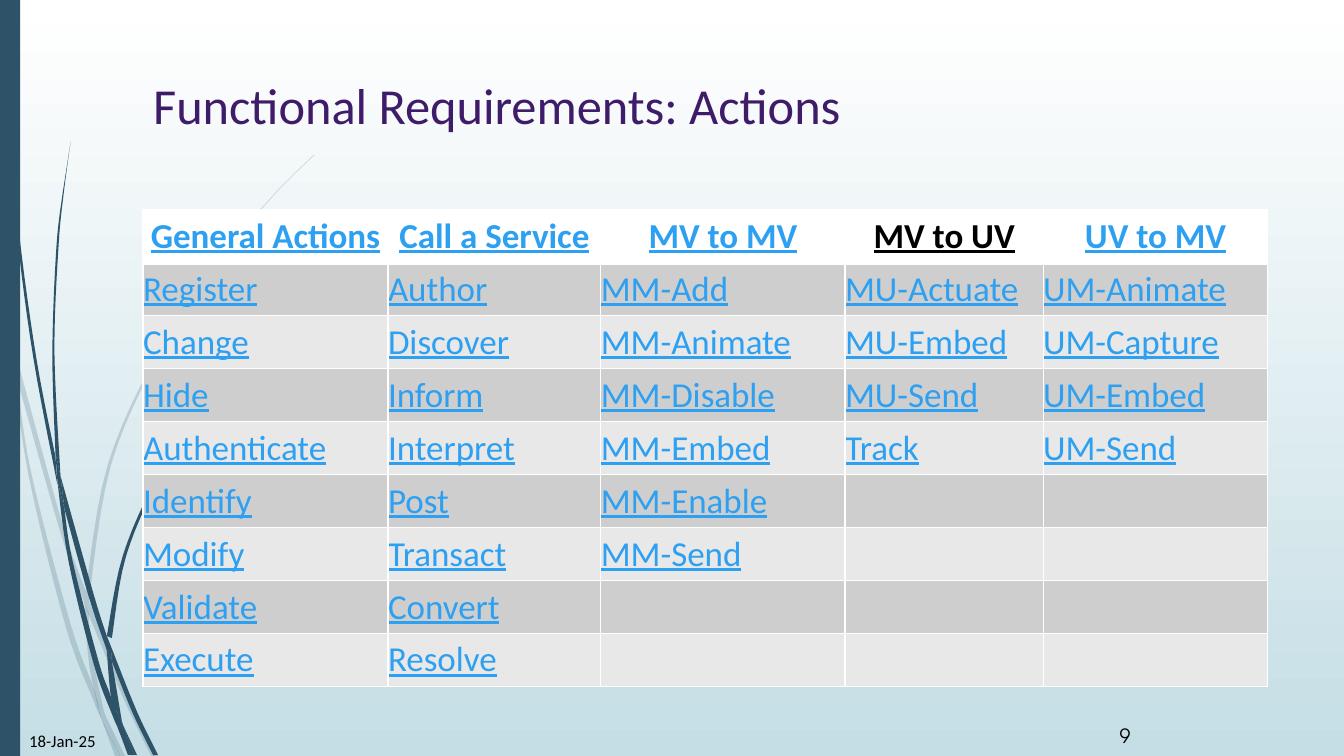
from dataclasses import dataclass

from lxml.etree import SubElement
from pptx import Presentation
from pptx.dml.color import RGBColor
from pptx.enum.shapes import MSO_SHAPE
from pptx.enum.text import MSO_ANCHOR, PP_ALIGN
from pptx.oxml import parse_xml
from pptx.oxml.ns import nsdecls, qn
from pptx.slide import Slide
from pptx.util import Pt

Points = list[tuple[float, float]]


@dataclass(frozen=True)
class Theme:
    stem: str = "2E5369"
    sky_top: str = "FFFFFF"
    sky_bottom: str = "C5DEE5"
    title: str = "3F1C6A"
    link: str = "2DA0F1"
    text: str = "000000"
    header: str = "FFFFFF"
    bands: tuple[str, str] = ("CECECE", "E8E8E8")
    border: str = "FFFFFF"
    font: str = "Calibri"
    number_font: str = "TeX Gyre Adventor"
    title_size: int = 36
    table_size: int = 25
    date_size: int = 12
    number_size: int = 14
    pale_opacity: int = 20


@dataclass(frozen=True)
class Blade:
    """A grass blade bounded by two smooth sides, in points."""
    outward: Points
    back: Points


@dataclass(frozen=True)
class Label:
    text: str
    left: float
    top: float
    width: float
    height: float
    inset_top: float
    size: int
    font: str


THEME = Theme()

PALE_BLADES = [
    Blade([(7.9, 252), (6.5, 231.8), (0, 203)], [(0, 215.3), (7.2, 247.7)]),
    Blade([(12.2, 270.7), (41.8, 375.8), (60.5, 431.3)],
          [(61.2, 421.9), (44.6, 374.4), (10.1, 248.4)]),
    Blade([(63.4, 439.2), (88.6, 499.7), (108, 540)],
          [(111.6, 540), (91.4, 498.2), (63.4, 429.1)]),
    Blade([(85.7, 540), (89.3, 540)], [(75.6, 511.9)]),
    Blade([(7.9, 252), (20.2, 338.4), (46.8, 447.1), (66.2, 499), (72.7, 514.1)],
          [(71.3, 509), (67, 491.8), (50.4, 445.7), (22.3, 337.7), (12.2, 270.7)]),
    Blade([(60.5, 431.3), (62.6, 465.1), (67, 491.8), (75.6, 511.9)],
          [(74.2, 508.3), (65.5, 465.1), (63.4, 437.8)]),
    Blade([(63.4, 429.1), (79.2, 332.6), (115.2, 251.3), (164.9, 176.4),
           (193, 142.6), (208.8, 126), (224.6, 110.9)],
          [(224.6, 110.2), (208.1, 126), (193, 141.8), (164.2, 175.7),
           (113.8, 250.6), (77, 331.9), (61.2, 421.9)]),
    Blade([(72.7, 514.1), (82.1, 540)], [(85.7, 540)]),
    Blade([(63.4, 439.2), (63.4, 429.1)], [(61.2, 421.9), (60.5, 431.3)]),
    Blade([(67, 491.8), (72.7, 514.1), (85.7, 540)], [(75.6, 511.9), (69.1, 498.2)]),
]
DARK_BLADES = [
    Blade([(2.2, 0), (2.9, 34.6), (5, 79.2), (12.2, 167.8), (23.8, 255.6), (41, 346.3)],
          [(39.6, 326.2), (25.9, 255.6), (13.7, 167), (5.8, 78.5), (3.6, 34.6), (2.9, 0)]),
    Blade([(46.1, 363.6), (63.4, 426.2), (76.3, 464.4)],
          [(76.3, 454.3), (67, 424.8), (43.2, 339.8)]),
    Blade([(79.9, 472.3), (95, 509.8), (109.4, 539.3)],
          [(113, 539.3), (97.9, 508.3), (79.2, 461.5)]),
    Blade([(41, 343.4), (49, 401), (67, 474.5), (79.9, 509.8), (84.2, 519.8)],
          [(83.5, 516.2), (79.2, 497.5), (70.6, 473), (51.8, 400.3), (46.1, 363.6)]),
    Blade([(43.2, 339.8), (38.9, 251.3), (41.8, 176.4), (45.4, 139), (50.4, 101.5)],
          [(44.6, 139), (40.3, 176.4), (37.4, 251.3), (39.6, 323.3)]),
    Blade([(95.8, 539.3), (97.9, 539.3)], [(87.8, 517.7)]),
    Blade([(41, 343.4), (46.1, 363.6)], [(43.2, 339.8), (39.6, 323.3)]),
    Blade([(79.9, 455.8), (90, 397.4), (113.8, 342.7), (147.6, 292.3),
           (166.3, 269.3), (176.4, 258.5), (187.9, 247.7)],
          [(187.2, 247.7), (176.4, 257.8), (166.3, 268.6), (146.9, 291.6),
           (112.3, 341.3), (87.8, 396.7), (76.3, 454.3)]),
    Blade([(84.2, 519.8), (91.4, 539.3)], [(94.3, 539.3)]),
    Blade([(76.3, 464.4), (79.2, 497.5), (83.5, 508.3), (87.8, 517.7)],
          [(87.1, 515.5), (79.9, 472.3)]),
    Blade([(76.3, 464.4), (79.9, 472.3)], [(79.2, 461.5), (76.3, 454.3)]),
    Blade([(79.2, 497.5), (84.2, 519.8), (93.6, 539.3)],
          [(95.8, 539.3), (87.8, 517.7), (83.5, 508.3)]),
]

ACTIONS = {
    "General Actions": ["Register", "Change", "Hide", "Authenticate", "Identify",
                        "Modify", "Validate", "Execute"],
    "Call a Service": ["Author", "Discover", "Inform", "Interpret", "Post",
                       "Transact", "Convert", "Resolve"],
    "MV to MV": ["MM-Add", "MM-Animate", "MM-Disable", "MM-Embed", "MM-Enable", "MM-Send"],
    "MV to UV": ["MU-Actuate", "MU-Embed", "MU-Send", "Track"],
    "UV to MV": ["UM-Animate", "UM-Capture", "UM-Embed", "UM-Send"],
}
UNLINKED_HEADER = "MV to UV"
COLUMN_WIDTHS = [175, 152, 174.5, 141.5, 160.5]
ROW_HEIGHT = 37.87

LABELS = [
    Label("18-Jan-25", 13.7, 518.4, 78.5, 28.8, 3.6, THEME.date_size, THEME.font),
    Label("9", 792.7, 517, 43.9, 3.6, 0, THEME.number_size, THEME.number_font),
]


def smooth(side: Points, steps: int = 6) -> Points:
    """Sample a Catmull-Rom curve through the points of one side."""
    padded = [side[0], *side, side[-1]]
    curve = [side[0]]
    for a, b, c, d in zip(padded, padded[1:], padded[2:], padded[3:]):
        for step in range(1, steps + 1):
            t = step / steps
            x, y = (q + t * (r - p) / 2 + t**2 * (2 * p - 5 * q + 4 * r - s) / 2
                    + t**3 * (3 * q - p - 3 * r + s) / 2
                    for p, q, r, s in zip(a, b, c, d))
            curve.append((x, y))
    return curve


def draw_blade(slide: Slide, blade: Blade, opacity: int) -> None:
    units = 100  # outline units per point
    outline = [(x * units, y * units) for x, y in smooth(blade.outward) + smooth(blade.back)]
    builder = slide.shapes.build_freeform(*outline[0], scale=Pt(1) / units)
    builder.add_line_segments(outline[1:], close=True)
    shape = builder.convert_to_shape()
    paint(shape, THEME.stem)
    if opacity < 100:
        color = shape.fill._xPr.find(qn("a:solidFill"))[0]
        SubElement(color, qn("a:alpha"), val=str(opacity * 1000))


def paint(shape, color: str) -> None:
    shape.shadow.inherit = False
    shape.fill.solid()
    shape.fill.fore_color.rgb = RGBColor.from_string(color)
    shape.line.fill.background()


def format_font(font, size: int, color: str, name: str = THEME.font) -> None:
    font.size, font.name = Pt(size), name
    font.color.rgb = RGBColor.from_string(color)


def format_cell(cell, text: str, row: int) -> None:
    is_header = row == 0
    cell.fill.solid()
    cell.fill.fore_color.rgb = RGBColor.from_string(
        THEME.header if is_header else THEME.bands[(row - 1) % 2])
    cell.margin_left = cell.margin_top = cell.margin_right = cell.margin_bottom = 0
    cell.vertical_anchor = MSO_ANCHOR.MIDDLE
    for index, side in enumerate(("lnL", "lnR", "lnT", "lnB")):
        width = Pt(3 if is_header and side == "lnB" else 1)
        cell._tc.get_or_add_tcPr().insert(index, parse_xml(
            f'<a:{side} {nsdecls("a")} w="{width}"><a:solidFill>'
            f'<a:srgbClr val="{THEME.border}"/></a:solidFill></a:{side}>'))
    if text:
        cell.text_frame.text = text
        paragraph = cell.text_frame.paragraphs[0]
        paragraph.alignment = PP_ALIGN.CENTER if is_header else PP_ALIGN.LEFT
        font = paragraph.runs[0].font
        format_font(font, THEME.table_size, THEME.text if text == UNLINKED_HEADER else THEME.link)
        font.bold, font.underline = is_header, True


def draw_table(slide: Slide) -> None:
    row_count = 1 + max(map(len, ACTIONS.values()))
    table = slide.shapes.add_table(row_count, len(ACTIONS), Pt(102.2), Pt(149.8),
                                   Pt(sum(COLUMN_WIDTHS)), Pt(ROW_HEIGHT * row_count)).table
    for row in table.rows:
        row.height = Pt(ROW_HEIGHT)
    for column, (header, actions) in enumerate(ACTIONS.items()):
        table.columns[column].width = Pt(COLUMN_WIDTHS[column])
        texts = [header, *actions]
        for row in range(row_count):
            format_cell(table.cell(row, column), texts[row] if row < len(texts) else "", row)


def draw_label(slide: Slide, label: Label) -> None:
    box = slide.shapes.add_textbox(Pt(label.left), Pt(label.top), Pt(label.width), Pt(label.height))
    box.text_frame.word_wrap = True
    box.text_frame.margin_top = Pt(label.inset_top)
    box.text_frame.text = label.text
    format_font(box.text_frame.paragraphs[0].runs[0].font, label.size, THEME.text, label.font)


def main() -> None:
    presentation = Presentation()
    presentation.slide_width, presentation.slide_height = Pt(960), Pt(540)
    slide = presentation.slides.add_slide(presentation.slide_layouts[5])

    # Background gradient, running downwards
    background = slide.background.fill
    background.gradient()
    background.gradient_angle = 270
    for stop, color in zip(background.gradient_stops, (THEME.sky_top, THEME.sky_bottom)):
        stop.color.rgb = RGBColor.from_string(color)

    # Grass and side bar
    for blades, opacity in ((PALE_BLADES, THEME.pale_opacity), (DARK_BLADES, 100)):
        for blade in blades:
            draw_blade(slide, blade, opacity)
    paint(slide.shapes.add_shape(MSO_SHAPE.RECTANGLE, 0, 0, Pt(14.4), Pt(540)), THEME.stem)

    # Title
    title = slide.shapes.title
    title.left, title.top, title.width, title.height = Pt(102.2), Pt(49), Pt(803.5), Pt(100.8)
    title.text_frame.text = "Functional Requirements: Actions"
    title.text_frame.vertical_anchor = MSO_ANCHOR.TOP
    paragraph = title.text_frame.paragraphs[0]
    paragraph.alignment = PP_ALIGN.LEFT
    format_font(paragraph.runs[0].font, THEME.title_size, THEME.title)

    # Table, date and slide number
    draw_table(slide)
    for label in LABELS:
        draw_label(slide, label)

    presentation.save("out.pptx")


if __name__ == "__main__":
    main()
